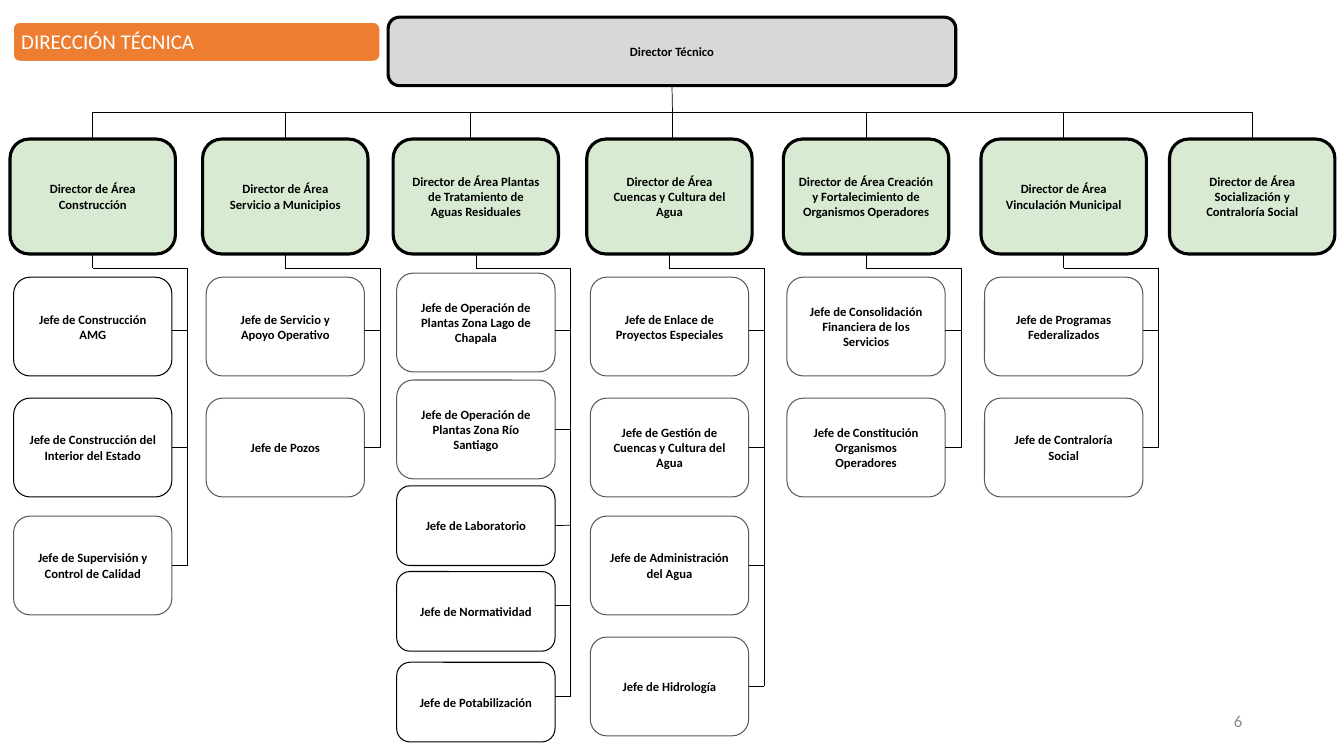
from lxml.etree import SubElement
from pptx import Presentation
from pptx.dml.color import RGBColor
from pptx.enum.shapes import MSO_CONNECTOR as Connector, MSO_SHAPE as Shape
from pptx.enum.text import MSO_ANCHOR as Anchor, MSO_AUTO_SIZE as AutoSize, PP_ALIGN as Align
from pptx.oxml.ns import qn
from pptx.util import Inches, Pt

# Grid: square cells of a tenth of an inch
CELL = 0.1
COLUMNS, ROWS = 133.3, 75
TOP, BOTTOM, RIGHT = 0, 2, 3

# Rows shared by the whole chart
BUS_ROW, AREA_ROW, BRANCH_ROW = 11.1, 13.8, 26.6
AREA_WIDTH, AREA_HEIGHT = 16.4, 11.4
CHIEF_INDENT, CHIEF_WIDTH, RAIL_OFFSET = 0.35, 15.7, 17.6

# Chief boxes: top row, height, row of the tick that joins them to the rail
STANDARD = [(27.5, 9.8, 32.8), (39.5, 9.8, 44.4), (51.2, 9.8, 56.1), (63.2, 9.8, 68.1)]
PLANTS = [(27.1, 9.8, 32.8), (37.7, 9.8, 42.6), (48.2, 7.9, 52.1),
          (56.7, 7.9, 60.1), (65.7, 7.9, 69.1)]

# Areas: left column, column of the stem, name, slots, chiefs
AREAS = [
    (1.0, 9.2, "Director de Área Construcción", STANDARD,
     ["Jefe de Construcción AMG", "Jefe de Construcción del Interior del Estado",
      "Jefe de Supervisión y Control de Calidad"]),
    (20.1, 28.3, "Director de Área Servicio a Municipios", STANDARD,
     ["Jefe de Servicio y Apoyo Operativo", "Jefe de Pozos"]),
    (39.0, 46.7, "Director de Área Plantas de Tratamiento de Aguas Residuales", PLANTS,
     ["Jefe de Operación de Plantas Zona Lago de Chapala",
      "Jefe de Operación de Plantas Zona Río Santiago",
      "Jefe de Laboratorio", "Jefe de Normatividad", "Jefe de Potabilización"]),
    (58.2, 66.7, "Director de Área Cuencas y Cultura del Agua", STANDARD,
     ["Jefe de Enlace de Proyectos Especiales", "Jefe de Gestión de Cuencas y Cultura del Agua",
      "Jefe de Administración del Agua", "Jefe de Hidrología"]),
    (77.7, 85.9, "Director de Área Creación y Fortalecimiento de Organismos Operadores", STANDARD,
     ["Jefe de Consolidación Financiera de los Servicios",
      "Jefe de Constitución Organismos Operadores"]),
    (97.3, 105.5, "Director de Área Vinculación Municipal", STANDARD,
     ["Jefe de Programas Federalizados", "Jefe de Contraloría Social"]),
    (116.0, 124.2, "Director de Área Socialización y Contraloría Social", STANDARD, []),
]
BLACK_EDGED = {"Jefe de Construcción AMG", "Jefe de Construcción del Interior del Estado",
               "Jefe de Laboratorio", "Jefe de Normatividad", "Jefe de Potabilización"}
NARROW_MARGIN = BLACK_EDGED | {AREAS[4][2]}


def color(code):
    return RGBColor.from_string(code)


def cells(count):
    return Inches(count * CELL)


class Chart:
    font = "Calibri"
    black, gray, green = "000000", "595959", "D9EAD3"

    def __init__(self, deck):
        self.slide = deck.slides.add_slide(deck.slide_layouts[5])
        self.shapes = self.slide.shapes

    def style(self, frame, size, code, align, margin, bold=False):
        frame.word_wrap = True
        frame.auto_size = AutoSize.NONE
        frame.vertical_anchor = Anchor.MIDDLE
        frame.margin_left = frame.margin_right = cells(margin)
        frame.margin_top = frame.margin_bottom = cells(margin)
        for para in frame.paragraphs:
            para.alignment = align
            for span in para.runs:
                font = span.font
                font.name, font.size, font.bold = self.font, Pt(size), bold
                font.color.rgb = color(code)

    def box(self, left, top, width, height, text="", fill=None, edge=black, weight=0.75):
        box = self.shapes.add_shape(Shape.ROUNDED_RECTANGLE, *map(cells, (left, top, width, height)))
        box.shadow.inherit = False
        if fill:
            box.fill.solid()
            box.fill.fore_color.rgb = color(fill)
        else:
            box.fill.background()
        box.line.color.rgb = color(edge)
        box.line.width = Pt(weight)
        if text:
            box.text_frame.text = text
            margin = 1 if text in NARROW_MARGIN else 1.3
            self.style(box.text_frame, 9, self.black, Align.CENTER, margin, bold=True)
        return box

    def line(self, x1, y1, x2, y2, start=None, end=None):
        """Straight line; start and end are optional (box, side) joints."""
        line = self.shapes.add_connector(Connector.STRAIGHT, *map(cells, (x1, y1, x2, y2)))
        line.line.color.rgb = color(self.black)
        line.line.width = Pt(0.5)
        SubElement(line.element.spPr, qn("a:effectLst"))
        if start:
            line.begin_connect(*start)
        if end:
            line.end_connect(*end)

    def title(self, text):
        self.box(1.3, 2.2, 36.4, 3.9, fill="ED7D31", edge="FFFFFF", weight=1)
        title = self.shapes.title
        title.left, title.top, title.width, title.height = map(cells, (1.5, 2.4, 36, 3.6))
        title.text_frame.text = text
        self.style(title.text_frame, 15, "FFFFFF", Align.LEFT, 0.6)
        title.text_frame.paragraphs[0].line_spacing = 0.9
        title.element.getparent().append(title.element)  # above its bar

    def page_number(self, text):
        box = self.shapes.add_textbox(*map(cells, (94.2, 69.5, 30, 4)))
        box.text_frame.text = text
        self.style(box.text_frame, 12, "8C8C8C", Align.RIGHT, 1)

    def chiefs(self, area, left, slots, names):
        rail = left + RAIL_OFFSET
        middle = left + AREA_WIDTH / 2
        placed = list(zip(slots, names))
        self.line(middle, AREA_ROW + AREA_HEIGHT, middle, BRANCH_ROW, start=(area, BOTTOM))
        self.line(middle, BRANCH_ROW, rail, BRANCH_ROW)
        self.line(rail, BRANCH_ROW, rail, placed[-1][0][2])
        for (top, height, tick), name in placed:
            edge = self.black if name in BLACK_EDGED else self.gray
            chief = self.box(left + CHIEF_INDENT, top, CHIEF_WIDTH, height, name, edge=edge)
            centered = abs(tick - top - height / 2) < 0.1
            self.line(rail, tick, left + CHIEF_INDENT + CHIEF_WIDTH, tick,
                      end=(chief, RIGHT) if centered else None)

    def area(self, left, stem, name, slots, names):
        area = self.box(left, AREA_ROW, AREA_WIDTH, AREA_HEIGHT, name, self.green, weight=2.25)
        centered = abs(stem - left - AREA_WIDTH / 2) < 0.1
        self.line(stem, BUS_ROW, stem, AREA_ROW, end=(area, TOP) if centered else None)
        if names:
            self.chiefs(area, left, slots, names)


def main():
    deck = Presentation()
    deck.slide_width, deck.slide_height = cells(COLUMNS), cells(ROWS)
    chart = Chart(deck)

    # Head of the chart and the bus below it
    director = chart.box(38.5, 1.7, 56.3, 6.8, "Director Técnico", "D8D8D8", weight=2.25)
    chart.line(66.7, 8.5, 66.7, BUS_ROW, start=(director, BOTTOM))
    chart.line(AREAS[0][1], BUS_ROW, AREAS[-1][1], BUS_ROW)

    # Areas with their chiefs
    for area in AREAS:
        chart.area(*area)

    # Title and page number
    chart.title("DIRECCIÓN TÉCNICA")
    chart.page_number("6")
    deck.save("out.pptx")


if __name__ == "__main__":
    main()
